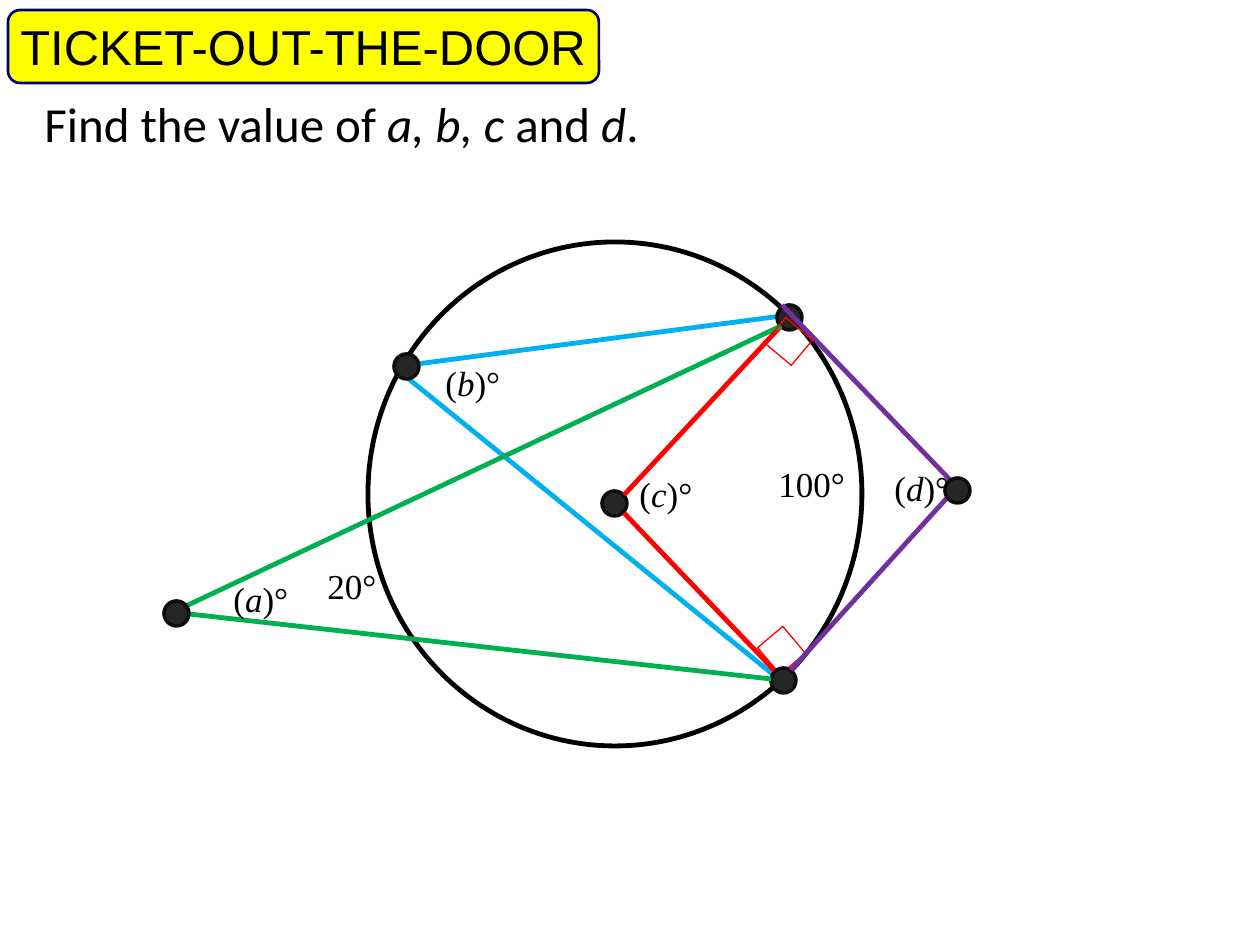
import pptx
import pptx.dml.color
import pptx.enum.shapes
import pptx.oxml.ns
import pptx.util
from lxml import etree

RGBColor = pptx.dml.color.RGBColor
SHAPES = pptx.enum.shapes.MSO_SHAPE

BLACK = RGBColor(0x00, 0x00, 0x00)
YELLOW = RGBColor(0xFF, 0xFF, 0x00)
NAVY = RGBColor(0x00, 0x00, 0x80)
DOT_FILL = RGBColor(0x26, 0x26, 0x26)
DOT_EDGE = RGBColor(0x0D, 0x0D, 0x0D)
BLUE = RGBColor(0x00, 0xB0, 0xF0)
RED = RGBColor(0xFF, 0x00, 0x00)
GREEN = RGBColor(0x00, 0xB0, 0x50)
PURPLE = RGBColor(0x70, 0x30, 0xA0)

PX = 914400 / 126  # EMU per px
SLIDE_SIZE = (1260, 945)

# Content: texts are lists of (wording, italic); boxes are left, top, width, height
TITLE = [("TICKET-OUT-THE-DOOR", False)]
TITLE_FRAME = (8, 10, 591, 73)
TITLE_BOX = (8, 10, 990, 72)
QUESTION = [("Find the value of ", False), ("a, b, c ", True), ("and", False),
            (" d", True), (".", False)]
QUESTION_BOX = (32, 87, 1040, 339)

CIRCLE = (368, 242, 494, 504)
DOT_SIZE = 25
CIRCLE_DOTS = [(394, 354), (777, 305), (771, 668), (602, 491)]
OUTER_DOTS = [(164, 601), (945, 478)]
INSCRIBED_SIDES = [(BLUE, (394, 367), (789, 315)), (BLUE, (394, 367), (791, 689))]
OTHER_SIDES = [
    (RED, (624, 495), (781, 326)), (RED, (624, 513), (774, 670)),
    (GREEN, (169, 614), (781, 326)), (GREEN, (189, 614), (771, 679)),
    (PURPLE, (956, 488), (791, 670)), (PURPLE, (956, 486), (782, 305)),
]
RIGHT_ANGLE_SIZE = (35, 33)
LOWER_RIGHT_ANGLE = (764, 634, 50)  # left, top, rotation
UPPER_RIGHT_ANGLE = (771, 325, 40)

LABEL_SIZE = (116, 55)
ANGLES = {"a": (221, 571), "b": (433, 355), "c": (627, 466), "d": (882, 460)}
ARCS = {"100°": (766, 456), "20°": (315, 558)}


def emu(*lengths):
    return [round(length * PX) for length in lengths]


def add_outline(kind, box, line_color, line_width, fill=None):
    shape = slide.shapes.add_shape(kind, *emu(*box))
    shape.shadow.inherit = False
    if fill is None:
        shape.fill.background()
    else:
        shape.fill.solid()
        shape.fill.fore_color.rgb = fill
    shape.line.color.rgb = line_color
    shape.line.width = pptx.util.Pt(line_width)
    return shape


def add_text(pieces, box, font_name, size):
    frame = slide.shapes.add_textbox(*emu(*box)).text_frame
    frame.word_wrap = True
    paragraph = frame.paragraphs[0]
    paragraph.font.name = font_name
    paragraph.font.size = pptx.util.Pt(size)
    paragraph.font.color.rgb = BLACK
    for wording, italic in pieces:
        run = paragraph.add_run()
        run.text = wording
        if italic:
            run.font.italic = True


def add_sides(sides):
    for color, start, end in sides:
        side = slide.shapes.add_connector(
            pptx.enum.shapes.MSO_CONNECTOR.STRAIGHT, *emu(*start, *end))
        side.line.color.rgb = color
        side.line.width = pptx.util.Pt(2.75)
        etree.SubElement(side._element.spPr, pptx.oxml.ns.qn("a:effectLst"))


def add_dots(corners):
    for corner in corners:
        add_outline(SHAPES.OVAL, (*corner, DOT_SIZE, DOT_SIZE), DOT_EDGE, 2, DOT_FILL)


def add_right_angle(left, top, rotation):
    mark = add_outline(SHAPES.RECTANGLE, (left, top, *RIGHT_ANGLE_SIZE), RED, 0.75)
    mark.rotation = rotation


presentation = pptx.Presentation()
presentation.slide_width, presentation.slide_height = emu(*SLIDE_SIZE)
slide = presentation.slides.add_slide(presentation.slide_layouts[6])

# Heading and question
add_outline(SHAPES.ROUNDED_RECTANGLE, TITLE_FRAME, NAVY, 1.5, YELLOW)
add_text(TITLE, TITLE_BOX, "Arial", 28)
add_text(QUESTION, QUESTION_BOX, "Calibri", 28)

# Circle with its angles, from back to front
add_right_angle(*LOWER_RIGHT_ANGLE)
add_outline(SHAPES.OVAL, CIRCLE, BLACK, 2.75)
add_sides(INSCRIBED_SIDES)
add_dots(CIRCLE_DOTS)
add_sides(OTHER_SIDES)
add_dots(OUTER_DOTS)
add_right_angle(*UPPER_RIGHT_ANGLE)

# Angle and arc labels
for letter, corner in ANGLES.items():
    add_text([("(", False), (letter, True), (")°", False)],
             (*corner, *LABEL_SIZE), "Times New Roman", 20)
for measure, corner in ARCS.items():
    add_text([(measure, False)], (*corner, *LABEL_SIZE), "Times New Roman", 20)

presentation.save("out.pptx")
